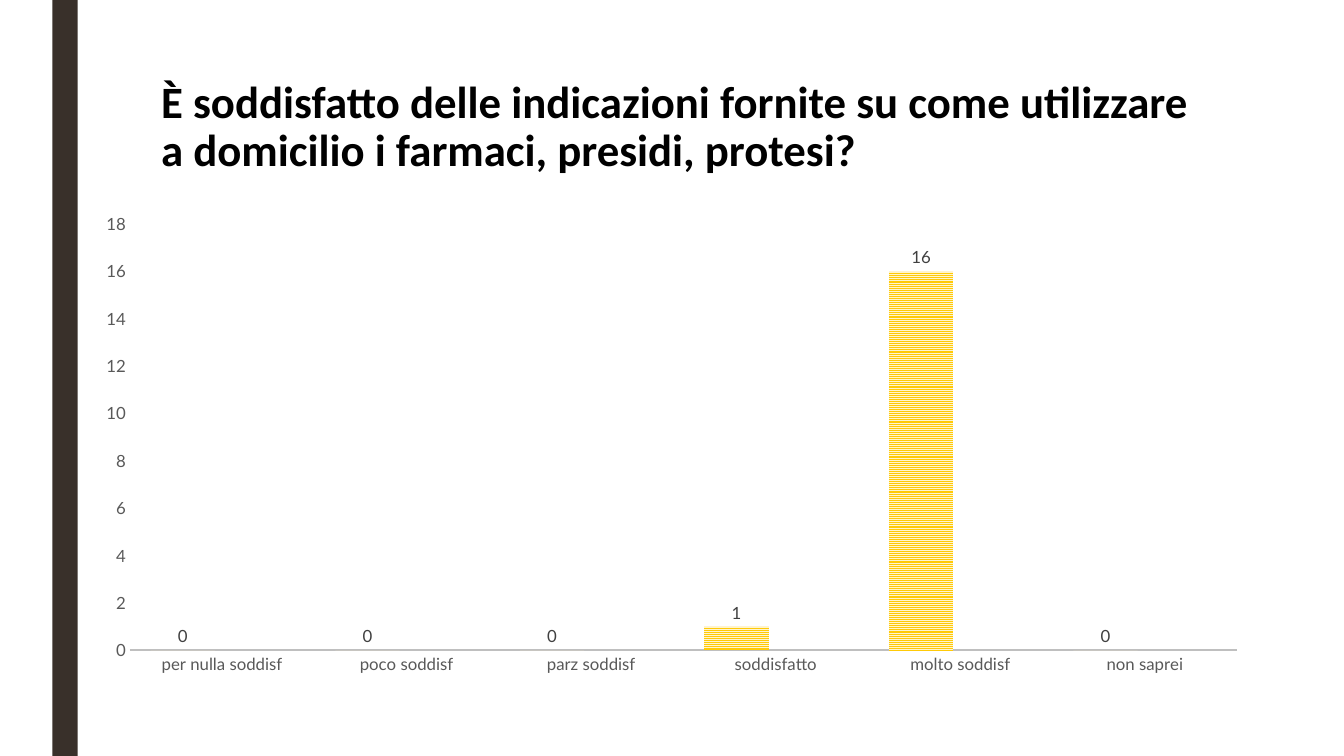
from lxml import etree
from pptx import Presentation
from pptx.chart.data import CategoryChartData
from pptx.dml.color import RGBColor
from pptx.enum.chart import XL_CHART_TYPE, XL_LABEL_POSITION, XL_TICK_MARK
from pptx.enum.dml import MSO_PATTERN
from pptx.enum.shapes import MSO_SHAPE
from pptx.enum.text import MSO_ANCHOR
from pptx.oxml.ns import qn
from pptx.util import Inches, Pt

COLUMNS = XL_CHART_TYPE.COLUMN_CLUSTERED
OUTSIDE_END = XL_LABEL_POSITION.OUTSIDE_END
NO_TICK = XL_TICK_MARK.NONE
STRIPES = MSO_PATTERN.NARROW_HORIZONTAL
RECTANGLE = MSO_SHAPE.RECTANGLE
TOP = MSO_ANCHOR.TOP

COLORS = {
    "background": "FFFFFF",
    "band": "39302A",
    "question": "000000",
    "axis_text": "595959",
    "axis_line": "BFBFBF",
    "label": "404040",
}
QUESTION = ("È soddisfatto delle indicazioni fornite su come utilizzare "
            "a domicilio i farmaci, presidi, protesi?")
ANSWERS = {
    "per nulla soddisf": 0,
    "poco soddisf": 0,
    "parz soddisf": 0,
    "soddisfatto": 1,
    "molto soddisf": 16,
    "non saprei": 0,
}
SERIES_STRIPES = [("FFCA08", "FFF4CE"), ("F8931D", "FEE9D2")]
PLOT_AREA = {"x": 0.032, "y": 0.018, "w": 0.955, "h": 0.915}


def rgb(name):
    return RGBColor.from_string(COLORS[name])


def style_font(font, color, name="Lato", size=12, bold=False):
    font.color.rgb = rgb(color)
    values = {"name": name, "size": Pt(size), "bold": bold}
    for attribute, value in values.items():
        setattr(font, attribute, value)


def add_band(slide):
    band = slide.shapes.add_shape(
        RECTANGLE, Inches(0.52), 0, Inches(0.25), Inches(7.5))
    band.shadow.inherit = False
    band.fill.solid()
    band.fill.fore_color.rgb = rgb("band")
    band.line.fill.background()


def add_question(slide):
    frame = slide.shapes.add_textbox(
        Inches(1.5), Inches(0.75), Inches(10.5), Inches(1.62)).text_frame
    frame.word_wrap = True
    frame.vertical_anchor = TOP
    paragraph = frame.paragraphs[0]
    paragraph.line_spacing = 0.89
    run = paragraph.add_run()
    run.text = QUESTION
    style_font(run.font, "question", "Calibri", 32, True)


def style_axis(axis):
    axis.has_major_gridlines = False
    axis.major_tick_mark = NO_TICK
    axis.minor_tick_mark = NO_TICK
    style_font(axis.tick_labels.font, "axis_text")


def style_series(series, foreground, background):
    fill = series.format.fill
    fill.patterned()
    fill.pattern = STRIPES
    fill.fore_color.rgb = RGBColor.from_string(foreground)
    fill.back_color.rgb = RGBColor.from_string(background)
    series.format.line.fill.background()
    labels = series.data_labels
    labels.show_value = True
    labels.position = OUTSIDE_END
    style_font(labels.font, "label")


def place_plot_area(chart):
    plot_area = chart.plots[0]._element.getparent()
    layout = plot_area.find(qn("c:layout"))
    if layout is None:
        layout = etree.Element(qn("c:layout"))
        plot_area.insert(0, layout)
    manual = etree.SubElement(layout, qn("c:manualLayout"))
    settings = {"layoutTarget": "inner", "xMode": "edge", "yMode": "edge"}
    for tag, value in {**settings, **PLOT_AREA}.items():
        etree.SubElement(manual, qn("c:" + tag)).set("val", str(value))


def add_answers_chart(slide):
    answers = CategoryChartData()
    answers.categories = list(ANSWERS)
    answers.add_series("Series 1", list(ANSWERS.values()))
    answers.add_series("Series 2", [None] * len(ANSWERS))
    chart = slide.shapes.add_chart(
        COLUMNS, Inches(0.92), Inches(2.12), Inches(11.5), Inches(4.64),
        answers).chart
    chart.has_title = False
    chart.has_legend = False
    style_font(chart.font, "question", size=10)

    plot = chart.plots[0]
    values = {"gap_width": 65, "overlap": -22, "vary_by_categories": False}
    for attribute, value in values.items():
        setattr(plot, attribute, value)
    for series, stripes in zip(plot.series, SERIES_STRIPES):
        style_series(series, *stripes)

    for axis in (chart.category_axis, chart.value_axis):
        style_axis(axis)
    baseline = chart.category_axis.format.line
    baseline.width = Pt(1.5)
    baseline.color.rgb = rgb("axis_line")
    scale = chart.value_axis
    scale.format.line.fill.background()
    values = {"minimum_scale": 0, "maximum_scale": 18, "major_unit": 2}
    for attribute, value in values.items():
        setattr(scale, attribute, value)
    place_plot_area(chart)


def main():
    presentation = Presentation()
    presentation.slide_width = Inches(13.33)
    presentation.slide_height = Inches(7.5)
    slide = presentation.slides.add_slide(presentation.slide_layouts[6])
    slide.background.fill.solid()
    slide.background.fill.fore_color.rgb = rgb("background")
    add_band(slide)
    add_question(slide)
    add_answers_chart(slide)
    presentation.save("out.pptx")


if __name__ == "__main__":
    main()
